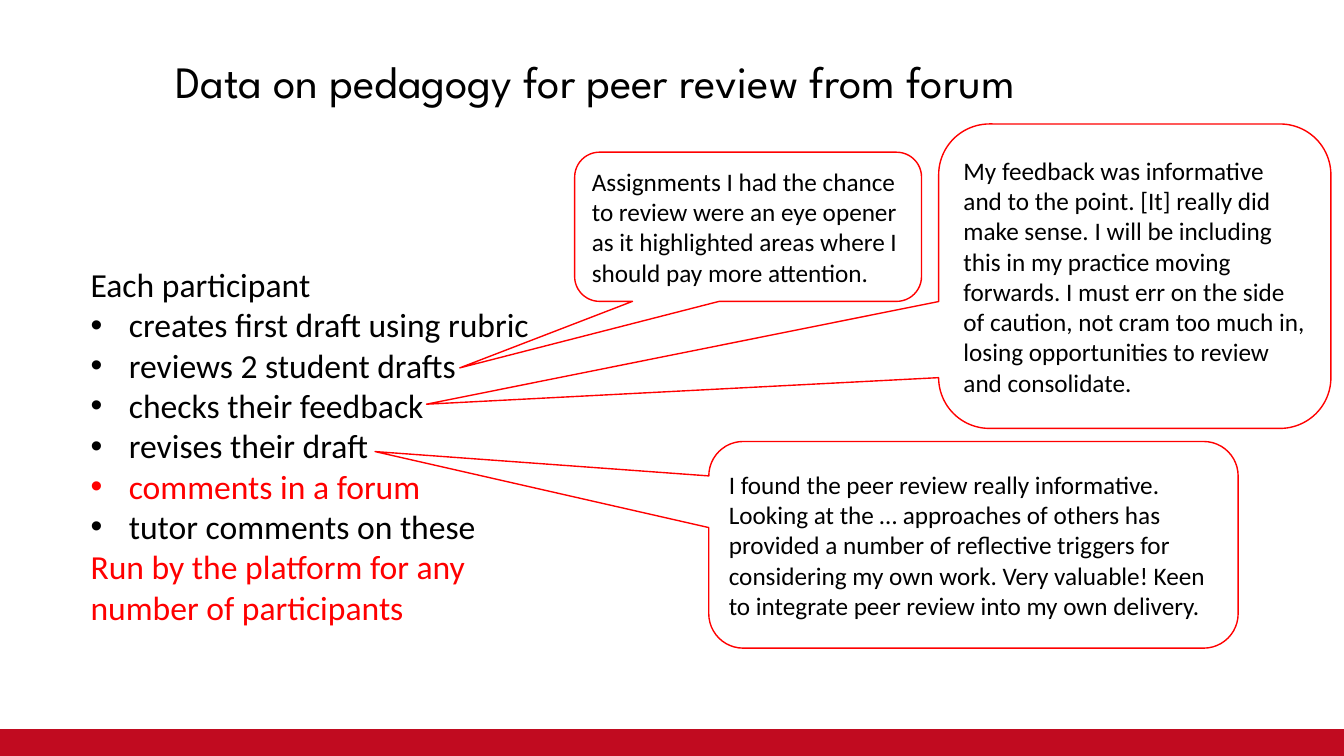
import pptx
import pptx.util
import pptx.dml.color
import pptx.enum.shapes
import pptx.enum.text
import pptx.oxml.ns
from lxml import etree

Inches, Pt = pptx.util.Inches, pptx.util.Pt
Shape = pptx.enum.shapes.MSO_SHAPE
Anchor = pptx.enum.text.MSO_ANCHOR

BLACK, WHITE, RED, CRIMSON = "000000", "FFFFFF", "FF0000", "C10B20"

TITLE = "Data on pedagogy for peer review from forum"

# text, bulleted, colour
STEPS = [
    ("Each participant", False, BLACK),
    ("creates first draft using rubric", True, BLACK),
    ("reviews 2 student drafts", True, BLACK),
    ("checks their feedback", True, BLACK),
    ("revises their draft", True, BLACK),
    ("comments in a forum", True, RED),
    ("tutor comments on these", True, BLACK),
    ("Run by the platform for any number of participants", False, RED),
]

# box (left, top, width, height), tip of the pointer (x, y), text
QUOTES = [
    ((7.03, 4.38, 5.25, 2.05), (3.72, 4.48),
     "I found the peer review really informative. Looking at the … approaches "
     "of others has provided a number of reflective triggers for considering "
     "my own work. Very valuable! Keen to integrate peer review into my own "
     "delivery."),
    ((9.31, 1.23, 3.89, 3.02), (4.23, 4.01),
     "My feedback was informative and to the point. [It] really did make "
     "sense. I will be including this in my practice moving forwards. I must "
     "err on the side of caution, not cram too much in, losing opportunities "
     "to review and consolidate."),
    ((5.7, 1.51, 3.44, 1.48), (4.56, 3.65),
     "Assignments I had the chance to review were an eye opener as it "
     "highlighted areas where I should pay more attention."),
]


def color(code):
    return pptx.dml.color.RGBColor.from_string(code)


def write(para, text, size, font="Calibri", code=BLACK):
    para.alignment = pptx.enum.text.PP_ALIGN.LEFT
    run = para.add_run()
    run.text = text
    run.font.size = Pt(size)
    run.font.name = font
    run.font.color.rgb = color(code)


def bullet(para):
    props = para._p.get_or_add_pPr()
    props.set("marL", str(Inches(0.38)))
    props.set("indent", str(-Inches(0.38)))
    qn = pptx.oxml.ns.qn
    etree.SubElement(props, qn("a:buFont")).set("typeface", "Arial")
    etree.SubElement(props, qn("a:buChar")).set("char", "•")


def panel(slide, kind, box, anchor, line=None):
    """Add a white shape that wraps its text."""
    shape = slide.shapes.add_shape(kind, *map(Inches, box))
    shape.shadow.inherit = False
    shape.fill.solid()
    shape.fill.fore_color.rgb = color(WHITE)
    if line:
        shape.line.color.rgb = color(line)
        shape.line.width = Pt(1)
    else:
        shape.line.fill.background()
    shape.text_frame.word_wrap = True
    shape.text_frame.vertical_anchor = anchor
    return shape


def band(slide, width):
    line = slide.shapes.add_connector(
        pptx.enum.shapes.MSO_CONNECTOR.STRAIGHT,
        0, Inches(7.37), width, Inches(7.37))
    line.line.color.rgb = color(CRIMSON)
    line.line.width = Pt(19.25)
    etree.SubElement(line._element.spPr, pptx.oxml.ns.qn("a:effectLst"))


def title(slide):
    box = slide.shapes.add_textbox(*map(Inches, (1.64, 0.11, 10.77, 1.45)))
    frame = box.text_frame
    frame.word_wrap = True
    frame.vertical_anchor = Anchor.MIDDLE
    frame.paragraphs[0].line_spacing = 0.9
    write(frame.paragraphs[0], TITLE, 32, "League Spartan")


def steps(slide):
    shape = panel(slide, Shape.RECTANGLE, (0.8, 2.57, 4.73, 3.74), Anchor.TOP)
    frame = shape.text_frame
    for i, (text, dot, code) in enumerate(STEPS):
        para = frame.add_paragraph() if i else frame.paragraphs[0]
        if dot:
            bullet(para)
        write(para, text, 24, code=code)


def quote(slide, box, tip, text):
    shape = panel(slide, Shape.ROUNDED_RECTANGULAR_CALLOUT, box,
                  Anchor.MIDDLE, RED)
    left, top, width, height = box
    # The pointer is set as a share of the box, from its centre
    shape.adjustments[0] = (tip[0] - left) / width - 0.5
    shape.adjustments[1] = (tip[1] - top) / height - 0.5
    write(shape.text_frame.paragraphs[0], text, 18)


def main():
    deck = pptx.Presentation()
    deck.slide_width, deck.slide_height = Inches(13.33), Inches(7.5)
    slide = deck.slides.add_slide(deck.slide_layouts[6])
    band(slide, deck.slide_width)
    title(slide)
    steps(slide)
    for box, tip, text in QUOTES:
        quote(slide, box, tip, text)
    deck.save("out.pptx")


if __name__ == "__main__":
    main()
